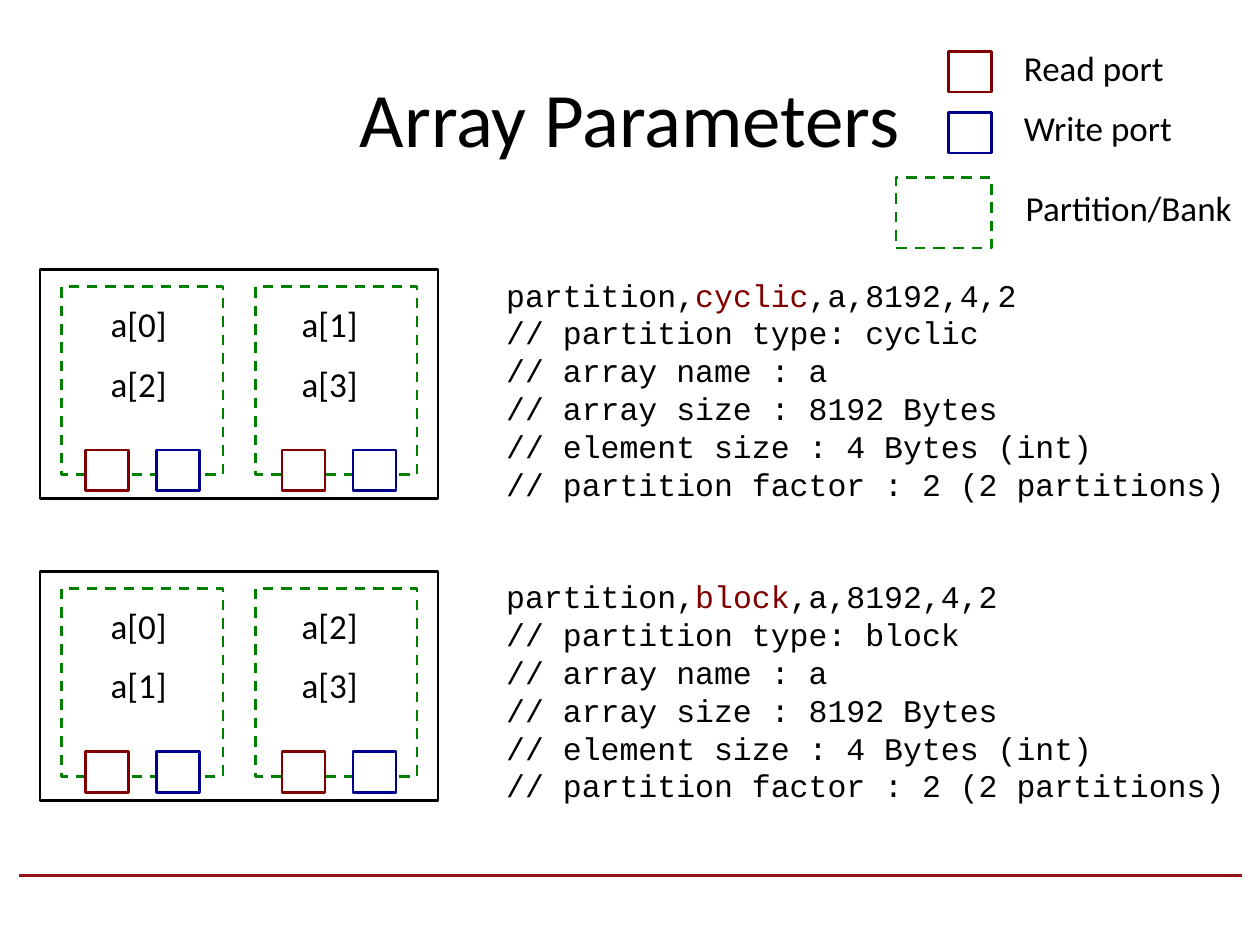
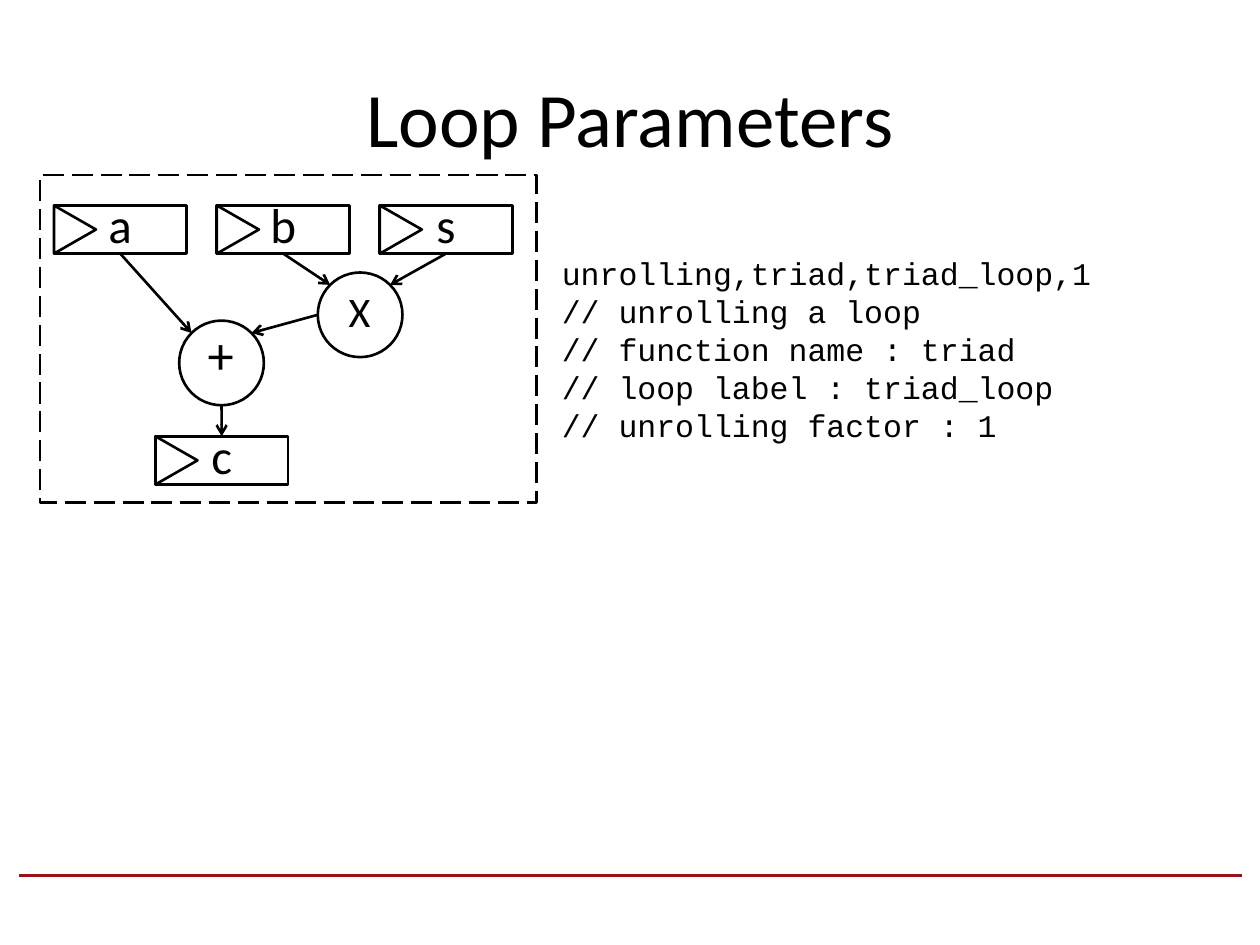
from pptx import Presentation
from pptx import util as u
from pptx.dml import color
from pptx.enum import dml, shapes, text
from pptx.oxml import xmlchemy, ns
from lxml import etree

BLACK, WHITE = "000000", "FFFFFF"
READ, WRITE, BANK, RULE = "800000", "000090", "008000", "971217"
RECT, OVAL = shapes.MSO_SHAPE.RECTANGLE, shapes.MSO_SHAPE.OVAL
TRIANGLE = shapes.MSO_SHAPE.ISOSCELES_TRIANGLE
DASH, LONG_DASH = dml.MSO_LINE.DASH, dml.MSO_LINE.LONG_DASH
CENTER, LEFT = text.PP_ALIGN.CENTER, text.PP_ALIGN.LEFT
BODY = {"name": "Calibri", "size": u.Pt(20)}
CODE = {"name": "Courier New", "size": u.Pt(18)}


def outline(item, hex_color, width=1.5, dash=None, fill=None, arrow=False):
    item.line.color.rgb = color.RGBColor.from_string(hex_color)
    item.line.width = u.Pt(width)
    if dash:
        item.line.dash_style = dash
    if item.shape_type == shapes.MSO_SHAPE_TYPE.AUTO_SHAPE:
        item.shadow.inherit = False
        if fill:
            item.fill.solid()
            item.fill.fore_color.rgb = color.RGBColor.from_string(fill)
        else:
            item.fill.background()
    else:
        if arrow:
            etree.SubElement(item.line._get_or_add_ln(), ns.qn("a:tailEnd"), type="arrow")
        etree.SubElement(item.element.spPr, ns.qn("a:effectLst"))
    return item


def write(frame, lines, font=BODY, align=LEFT, **frame_format):
    settings = {"word_wrap": True, "auto_size": text.MSO_AUTO_SIZE.SHAPE_TO_FIT_TEXT} | frame_format
    for key, value in settings.items():
        setattr(frame, key, value)
    for number, line in enumerate(lines):
        paragraph = frame.add_paragraph() if number else frame.paragraphs[0]
        paragraph.alignment = align
        for words, hex_color in [(line, BLACK)] if isinstance(line, str) else line:
            run = paragraph.add_run()
            run.text = words
            for key, value in font.items():
                setattr(run.font, key, value)
            run.font.color.rgb = color.RGBColor.from_string(hex_color)


deck = Presentation()
deck.slide_width, deck.slide_height = u.Pt(720), u.Pt(540)

pages = []
for heading in ("Array Parameters", "Loop Parameters"):
    slide = deck.slides.add_slide(deck.slide_layouts[5])
    title = slide.shapes.title
    for key, value in {"left": 36, "top": 21.6, "width": 648, "height": 90}.items():
        setattr(title, key, u.Pt(value))
    write(title.text_frame, [heading], {"name": "Calibri", "size": u.Pt(44)}, CENTER,
          auto_size=text.MSO_AUTO_SIZE.NONE, vertical_anchor=text.MSO_ANCHOR.MIDDLE)
    footer_rule = slide.shapes.add_connector(
        shapes.MSO_CONNECTOR.STRAIGHT, u.Pt(10.8), u.Pt(500.4), u.Pt(710), u.Pt(500.4))
    outline(footer_rule, RULE, 2)
    pages.append(slide.shapes)
arrays, loops = pages

legend = [
    ("Read port", READ, None, (542, 29.4, 24.6, 23.2), (578, 23, 94.4, 31.5)),
    ("Write port", WRITE, None, (542, 64.4, 24.6, 23.2), (578, 57.3, 130.4, 31.5)),
    ("Partition/Bank", BANK, DASH, (512, 101.4, 54.7, 40.4), (579, 102.8, 147.6, 31.5)),
]
for label, hex_color, dash, key_box, label_box in legend:
    outline(arrays.add_shape(RECT, *map(u.Pt, key_box)), hex_color, dash=dash, fill=WHITE)
    write(arrays.add_textbox(*map(u.Pt, label_box)).text_frame, [label])

partitionings = [("cyclic", [[0, 2], [1, 3]]), ("block", [[0, 1], [2, 3]])]
for order, (scheme, banks) in enumerate(partitionings):
    top = 154 + order * 172.4
    memory = arrays.add_shape(RECT, u.Pt(22.8), u.Pt(top), u.Pt(227.5), u.Pt(131))
    outline(memory, BLACK)
    for column, elements in enumerate(banks):
        bank = arrays.add_shape(
            RECT, u.Pt(35 + column * 111), u.Pt(top + 9.8), u.Pt(92.4), u.Pt(107.4))
        outline(bank, BANK, dash=DASH)
        for offset, hex_color in ((0, READ), (40.6, WRITE)):
            port = arrays.add_shape(RECT, u.Pt(49 + column * 112.2 + offset), u.Pt(top + 103.2),
                                    u.Pt(24.6), u.Pt(23.2))
            outline(port, hex_color, fill=WHITE)
        for row, index in enumerate(elements):
            element = arrays.add_textbox(u.Pt(49.7 + column * 109.2), u.Pt(top + 15.4 + row * 34),
                                         u.Pt(59), u.Pt(31.5))
            write(element.text_frame, [f"a[{index}]"], align=CENTER)
    directive = arrays.add_textbox(u.Pt(282.2), u.Pt(top), u.Pt(426.4), u.Pt(138))
    write(directive.text_frame, [
        [("partition,", BLACK), (scheme, READ), (",a,8192,4,2", BLACK)],
        f"// partition type: {scheme}",
        "// array name : a",
        "// array size : 8192 Bytes",
        "// element size : 4 Bytes (int)",
        "// partition factor : 2 (2 partitions)",
    ], CODE)

registers = {}
for name, left, top in (("a", 30.8, 117.4), ("b", 123.9, 117.4), ("s", 217, 117.4), ("c", 88.8, 249.3)):
    group = loops.add_group_shape().shapes
    register = outline(group.add_shape(RECT, u.Pt(left), u.Pt(top), u.Pt(75.8), u.Pt(27.5)), BLACK)
    write(register.text_frame, [name], {"name": "Calibri", "size": u.Pt(28)}, CENTER,
          auto_size=text.MSO_AUTO_SIZE.NONE, vertical_anchor=text.MSO_ANCHOR.BOTTOM,
          margin_left=0, margin_top=0, margin_right=0, margin_bottom=0)
    clock = group.add_shape(TRIANGLE, u.Pt(left - 1.7), u.Pt(top + 1.8), u.Pt(27.5), u.Pt(24))
    outline(clock, BLACK).rotation = 90
    registers[name] = register

operators = [
    ("X", 24, (181.6, 155.7), (192.2, 159.8, 27.4, 36)),
    ("+", 30, (102.4, 183.2), (111.6, 180.7, 29.5, 43.9)),
]
for symbol, size, corner, symbol_box in operators:
    outline(loops.add_shape(OVAL, *map(u.Pt, (*corner, 48.4, 48.4))), BLACK)
    write(loops.add_textbox(*map(u.Pt, symbol_box)).text_frame, [symbol],
          {"name": "Calibri", "size": u.Pt(size)}, word_wrap=False)

flows = [
    ("s", None, (254.9, 144.9), (222.9, 162.8)),
    ("b", None, (161.8, 144.9), (188.7, 162.8)),
    ("a", None, (68.7, 144.9), (109.5, 190.3)),
    (None, None, (181.6, 179.9), (143.7, 190.3)),
    (None, "c", (126.6, 231.6), (126.7, 249.3)),
]
for source, target, start, end in flows:
    flow = loops.add_connector(shapes.MSO_CONNECTOR.STRAIGHT, *map(u.Pt, (*start, *end)))
    if source:
        flow.begin_connect(registers[source], 2)
    if target:
        flow.end_connect(registers[target], 0)
    outline(flow, BLACK, arrow=True)

directive = loops.add_textbox(u.Pt(314), u.Pt(141.8), u.Pt(417.6), u.Pt(116.6))
write(directive.text_frame, [
    "unrolling,triad,triad_loop,1",
    "// unrolling a loop",
    "// function name : triad",
    "// loop label : triad_loop",
    "// unrolling factor : 1",
], CODE)
loop_body = loops.add_shape(RECT, u.Pt(22.8), u.Pt(100), u.Pt(283.8), u.Pt(187))
outline(loop_body, BLACK, dash=LONG_DASH)

deck.save("out.pptx")
